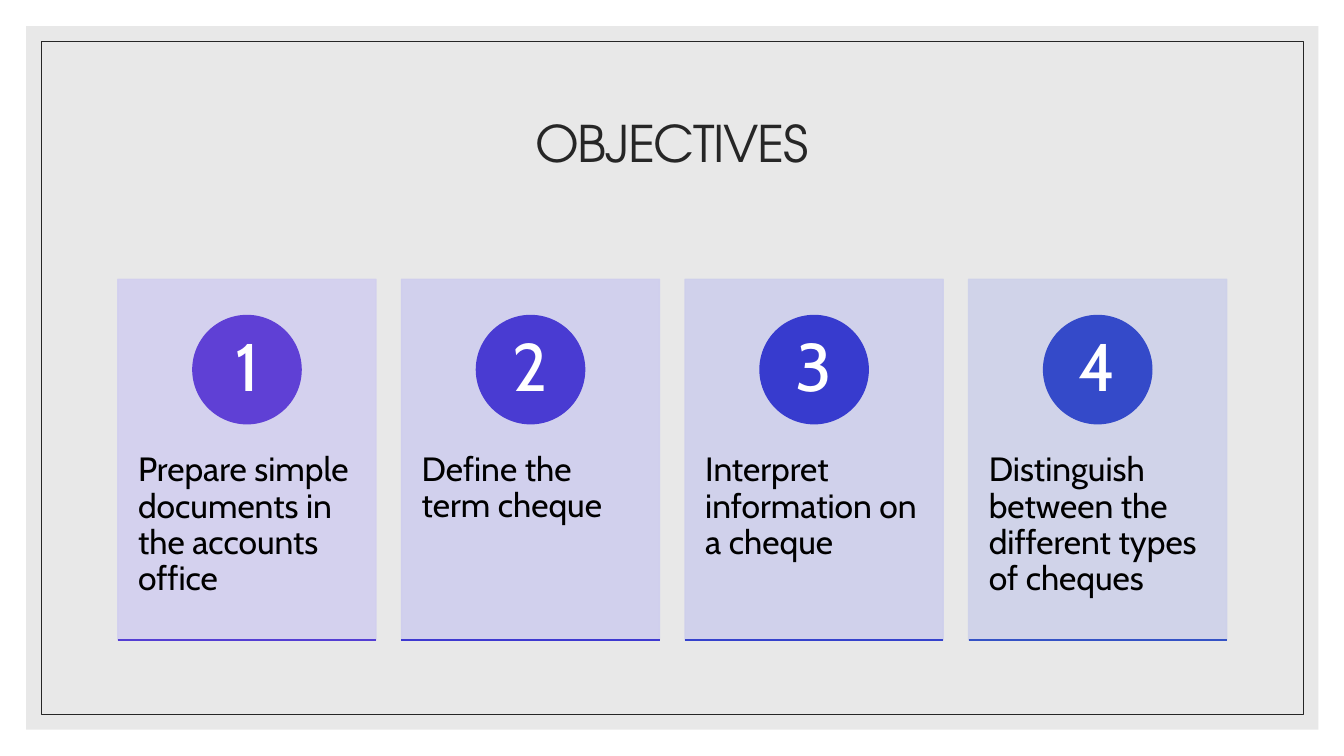
from dataclasses import dataclass
from typing import Optional

from lxml.etree import SubElement
from pptx import Presentation
from pptx.dml.color import RGBColor
from pptx.enum.shapes import MSO_CONNECTOR, MSO_SHAPE
from pptx.enum.text import MSO_ANCHOR, PP_ALIGN
from pptx.oxml.ns import qn
from pptx.shapes.autoshape import Shape
from pptx.slide import Slide
from pptx.text.text import _Run as Run
from pptx.util import Pt


@dataclass(frozen=True)
class Box:
    left: float
    top: float
    width: float
    height: float


@dataclass(frozen=True)
class Objective:
    text: str
    panel_color: str
    circle_color: str
    rule_color: str


OBJECTIVES = [
    Objective("Prepare simple documents in the accounts office", "D2CFEF", "5F40D5", "543ED3"),
    Objective("Define the term cheque", "CFCEEE", "493BD2", "3E39D0"),
    Objective("Interpret information on a cheque", "CECFEC", "373BCE", "3542CC"),
    Objective("Distinguish between the different types of cheques", "CED1EA", "344AC9", "3452C5"),
]

CARD_LEFT, CARD_TOP = 84.24, 199.44
CARD_WIDTH, CARD_HEIGHT = 184.32, 257.76
CARD_PITCH = 202.56
CIRCLE_SIZE, NUMBER_SIZE = 77.3, 54.7
CIRCLE_TOP = 225.36
BODY_TOP, BODY_HEIGHT = 297.36, 154.8


def color(value: str) -> RGBColor:
    return RGBColor.from_string(value)


def add_panel(slide: Slide, kind: MSO_SHAPE, box: Box, fill: Optional[str] = None,
              line: Optional[str] = None, line_width: float = 1, opacity: int = 100) -> Shape:
    shape = slide.shapes.add_shape(kind, Pt(box.left), Pt(box.top), Pt(box.width), Pt(box.height))
    shape.shadow.inherit = False
    if fill:
        shape.fill.solid()
        shape.fill.fore_color.rgb = color(fill)
    else:
        shape.fill.background()
    if line:
        shape.line.color.rgb = color(line)
        shape.line.width = Pt(line_width)
    else:
        shape.line.fill.background()
    if opacity < 100:
        for tint in shape.element.spPr.findall(".//" + qn("a:srgbClr")):
            SubElement(tint, qn("a:alpha")).set("val", str(opacity * 1000))
    return shape


def add_text(slide: Slide, box: Box, text: str, size: float, text_color: str,
             font: str = "Cabin", align: PP_ALIGN = PP_ALIGN.LEFT,
             anchor: MSO_ANCHOR = MSO_ANCHOR.TOP,
             inset_x: float = 7.2, inset_y: float = 3.6) -> Run:
    shape = slide.shapes.add_textbox(Pt(box.left), Pt(box.top), Pt(box.width), Pt(box.height))
    frame = shape.text_frame
    frame.word_wrap = True
    frame.vertical_anchor = anchor
    frame.margin_left = frame.margin_right = Pt(inset_x)
    frame.margin_top = frame.margin_bottom = Pt(inset_y)
    paragraph = frame.paragraphs[0]
    paragraph.alignment = align
    paragraph.line_spacing = 0.9
    run = paragraph.add_run()
    run.text = text
    run.font.name = font
    run.font.size = Pt(size)
    run.font.color.rgb = color(text_color)
    return run


def add_rule(slide: Slide, left: float, top: float, width: float, line: str) -> None:
    connector = slide.shapes.add_connector(
        MSO_CONNECTOR.STRAIGHT, Pt(left), Pt(top), Pt(left + width), Pt(top))
    connector.line.color.rgb = color(line)
    connector.line.width = Pt(1)
    SubElement(connector.element.spPr, qn("a:effectLst"))


def add_card(slide: Slide, index: int, objective: Objective) -> None:
    left = CARD_LEFT + index * CARD_PITCH
    add_panel(slide, MSO_SHAPE.RECTANGLE, Box(left, CARD_TOP, CARD_WIDTH, CARD_HEIGHT),
              objective.panel_color, objective.panel_color, opacity=90)
    add_text(slide, Box(left, BODY_TOP, CARD_WIDTH, BODY_HEIGHT), objective.text, 24, "000000",
             inset_x=14.4, inset_y=26)

    # Numbered circle, centred across the card
    circle_left = left + (CARD_WIDTH - CIRCLE_SIZE) / 2
    add_panel(slide, MSO_SHAPE.OVAL, Box(circle_left, CIRCLE_TOP, CIRCLE_SIZE, CIRCLE_SIZE),
              objective.circle_color, objective.circle_color)
    margin = (CIRCLE_SIZE - NUMBER_SIZE) / 2
    add_text(slide, Box(circle_left + margin, CIRCLE_TOP + margin, NUMBER_SIZE, NUMBER_SIZE),
             str(index + 1), 48, "FFFFFF", align=PP_ALIGN.CENTER, anchor=MSO_ANCHOR.MIDDLE,
             inset_x=6, inset_y=0.9)

    # Rule along the bottom edge
    add_rule(slide, left, CARD_TOP + CARD_HEIGHT, CARD_WIDTH, objective.rule_color)


def main() -> None:
    presentation = Presentation()
    presentation.slide_width, presentation.slide_height = Pt(960), Pt(540)
    slide = presentation.slides.add_slide(presentation.slide_layouts[6])

    # Grey backdrop and thin frame
    add_panel(slide, MSO_SHAPE.RECTANGLE, Box(18.72, 18.72, 923, 502.56), "D9D9D9", opacity=60)
    add_panel(slide, MSO_SHAPE.RECTANGLE, Box(29.5, 29.5, 901.2, 481),
              line="262626", line_width=0.5)

    # Title with tightened letters
    title = add_text(slide, Box(84, 50.4, 792, 108), "OBJECTIVES", 36, "262626",
                     "TeX Gyre Adventor", PP_ALIGN.CENTER, MSO_ANCHOR.MIDDLE)
    title.font._element.set("spc", "-100")

    # One card per objective
    for index, objective in enumerate(OBJECTIVES):
        add_card(slide, index, objective)

    presentation.save("out.pptx")


if __name__ == "__main__":
    main()
